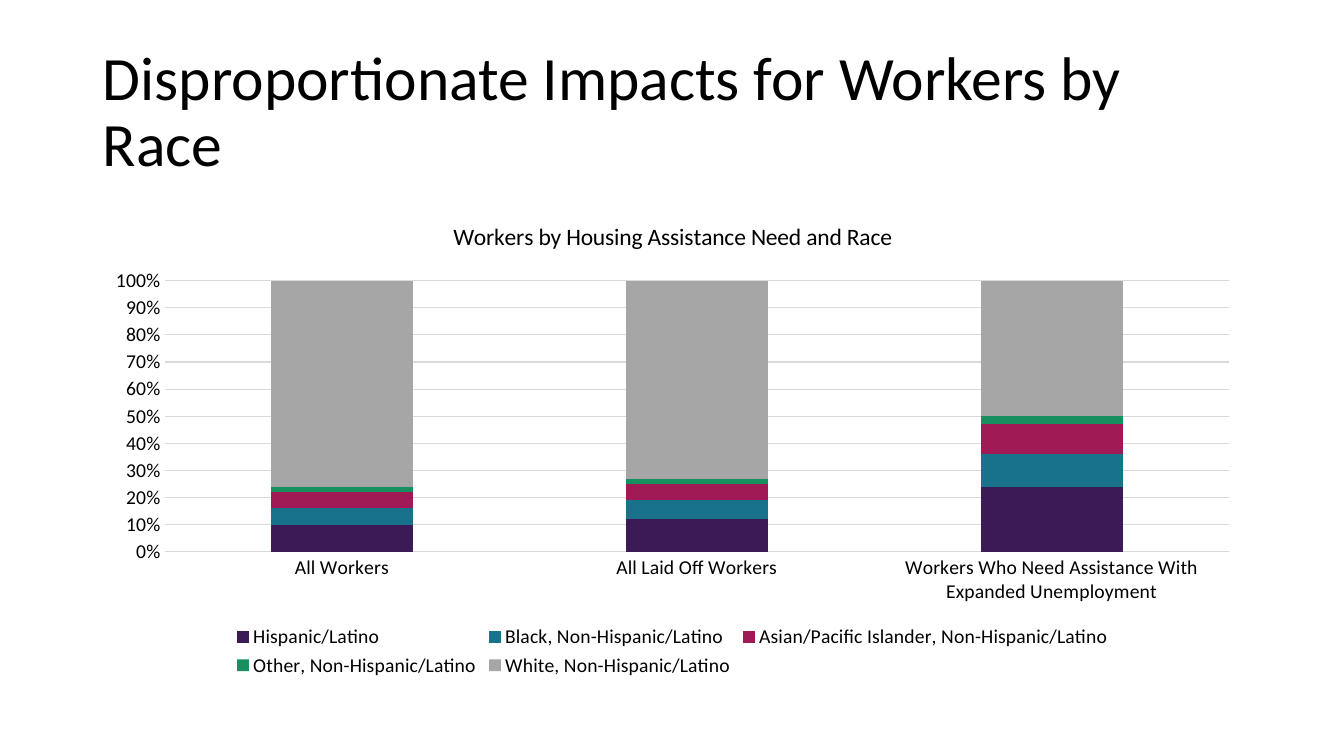
from pptx import Presentation
from pptx import util as u
from pptx.chart.data import CategoryChartData
from pptx.dml.color import RGBColor
from pptx.enum import chart as charts, text

FONT = "Calibri"
BLACK, GRID = "000000", "D9D9D9"
CATEGORIES = [
    "All Workers",
    "All Laid Off Workers",
    "Workers Who Need Assistance With Expanded Unemployment",
]
RACES = [
    ("Hispanic/Latino", (10, 12, 24), "3C1A56"),
    ("Black, Non-Hispanic/Latino", (6, 7, 12), "19728C"),
    ("Asian/Pacific Islander, Non-Hispanic/Latino", (6, 6, 11), "A01A56"),
    ("Other, Non-Hispanic/Latino", (2, 2, 3), "178F5E"),
    ("White, Non-Hispanic/Latino", (76, 73, 50), "A6A6A6"),
]


def color(hex_code):
    return RGBColor.from_string(hex_code)


def set_all(target, values):
    for name, value in values.items():
        setattr(target, name, value)


def style_font(font, size):
    set_all(font, {"name": FONT, "size": u.Pt(size), "bold": False})
    font.color.rgb = color(BLACK)


def style_line(line):
    line.width = u.Pt(0.75)
    line.color.rgb = color(GRID)


def add_title(page, left, top, width, height):
    box = page.shapes.add_textbox(left, top, width, height)
    set_all(box.text_frame, {
        "word_wrap": True,
        "auto_size": text.MSO_AUTO_SIZE.NONE,
        "vertical_anchor": text.MSO_ANCHOR.MIDDLE,
    })
    para = box.text_frame.paragraphs[0]
    para.line_spacing = 0.9
    span = para.add_run()
    span.text = "Disproportionate Impacts for Workers by Race"
    style_font(span.font, 44)


def add_race_chart(page, left, top, width, height):
    data = CategoryChartData()
    data.categories = CATEGORIES
    for name, values, _ in RACES:
        data.add_series(name, values)
    chart = page.shapes.add_chart(
        charts.XL_CHART_TYPE.COLUMN_STACKED_100, left, top, width, height, data
    ).chart
    style_font(chart.font, 14)

    # Chart title
    chart.has_title = True
    para = chart.chart_title.text_frame.paragraphs[0]
    span = para.add_run()
    span.text = "Workers by Housing Assistance Need and Race"
    style_font(span.font, 16.8)
    chart.chart_title.include_in_layout = False

    # Columns
    plot = chart.plots[0]
    set_all(plot, {"gap_width": 150, "overlap": 100, "vary_by_categories": False})
    for series, (_, _, fill) in zip(plot.series, RACES):
        series.format.fill.solid()
        series.format.fill.fore_color.rgb = color(fill)

    # Axes
    for axis in (chart.category_axis, chart.value_axis):
        set_all(axis, {
            "major_tick_mark": charts.XL_TICK_MARK.NONE,
            "minor_tick_mark": charts.XL_TICK_MARK.NONE,
        })
        style_font(axis.tick_labels.font, 14)
    style_line(chart.category_axis.format.line)
    value_axis = chart.value_axis
    value_axis.major_unit = 0.1
    value_axis.format.line.fill.background()
    style_line(value_axis.major_gridlines.format.line)
    set_all(value_axis.tick_labels, {
        "number_format": "0%", "number_format_is_linked": False,
    })

    # Legend
    chart.has_legend = True
    set_all(chart.legend, {
        "position": charts.XL_LEGEND_POSITION.BOTTOM, "include_in_layout": False,
    })
    style_font(chart.legend.font, 14)


def main():
    deck = Presentation()
    set_all(deck, {"slide_width": u.Inches(13.33), "slide_height": u.Inches(7.5)})
    page = deck.slides.add_slide(deck.slide_layouts[6])
    left, width = u.Inches(0.92), u.Inches(11.5)
    add_title(page, left, u.Inches(0.4), width, u.Inches(1.45))
    add_race_chart(page, left, u.Inches(2), width, u.Inches(4.76))
    deck.save("out.pptx")


if __name__ == "__main__":
    main()
